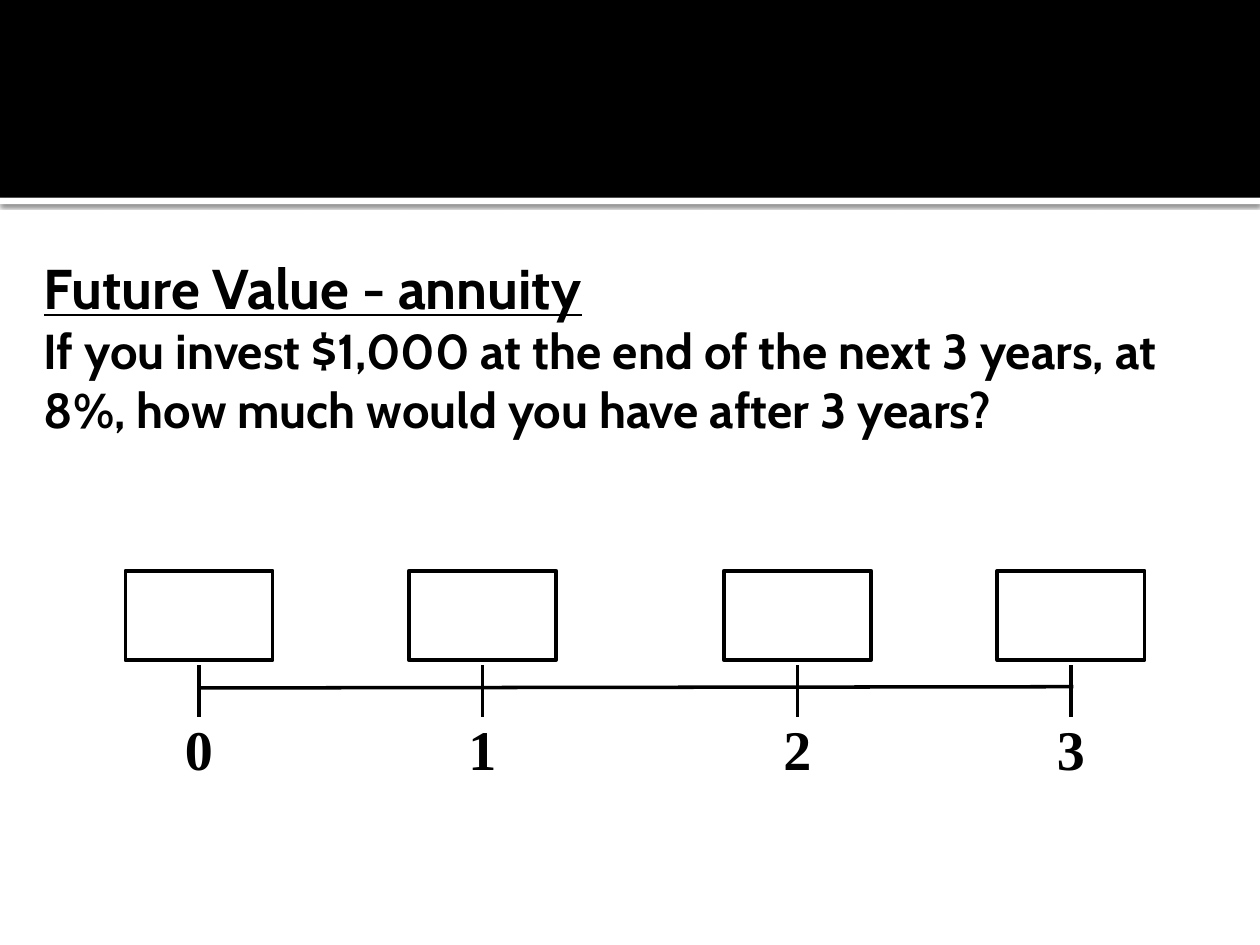
import pptx
import pptx.util
import pptx.dml.color
import pptx.enum.shapes
import pptx.enum.text
import pptx.oxml
import pptx.oxml.ns
from lxml import etree

Inches = pptx.util.Inches
Pt = pptx.util.Pt
RECT = pptx.enum.shapes.MSO_SHAPE.RECTANGLE


class Theme:
    black = pptx.dml.color.RGBColor(0, 0, 0)
    white = pptx.dml.color.RGBColor(255, 255, 255)
    sans = "Cabin"
    serif = "Times New Roman"
    large = 32
    body = 28
    line = 2


def add_tag(parent, tag, **attrs):
    return etree.SubElement(parent, pptx.oxml.ns.qn(tag), attrs)


class Deck:
    def __init__(self, theme):
        self.theme = theme
        self.file = pptx.Presentation()
        self.file.slide_width = Inches(10)
        self.file.slide_height = Inches(7.5)
        self.slide = self.file.slides.add_slide(self.file.slide_layouts[6])

    def rect(self, left, top, width, height, fill=None):
        """Filled band, or an outlined box when no fill is given."""
        shape = self.slide.shapes.add_shape(
            RECT, Inches(left), Inches(top), Inches(width), Inches(height))
        shape.shadow.inherit = False
        if fill is None:
            shape.fill.background()
            shape.line.color.rgb = self.theme.black
            shape.line.width = Pt(self.theme.line)
        else:
            shape.fill.solid()
            shape.fill.fore_color.rgb = fill
            shape.line.fill.background()
        return shape

    def shade(self, shape, blur, dist, alpha):
        """Soft shadow that falls straight down."""
        effects = shape._element.spPr.find(pptx.oxml.ns.qn("a:effectLst"))
        outer = add_tag(effects, "a:outerShdw", blurRad=str(Pt(blur)),
                        dist=str(Pt(dist)), dir="5400000", rotWithShape="0")
        color = add_tag(outer, "a:srgbClr", val=str(self.theme.black))
        add_tag(color, "a:alpha", val=str(alpha * 1000))

    def rule(self, x1, y1, x2, y2):
        line = self.slide.shapes.add_connector(
            pptx.enum.shapes.MSO_CONNECTOR.STRAIGHT,
            Inches(x1), Inches(y1), Inches(x2), Inches(y2))
        line.line.color.rgb = self.theme.black
        line.line.width = Pt(self.theme.line)
        add_tag(line._element.spPr, "a:effectLst")

    def text(self, left, top, width, height):
        """Empty wrapped text box; gives back its frame."""
        box = self.slide.shapes.add_textbox(
            Inches(left), Inches(top), Inches(width), Inches(height))
        box.text_frame.word_wrap = True
        return box.text_frame

    def run(self, para, words, face, size, under=False):
        run = para.add_run()
        run.text = words
        run.font.name = face
        run.font.size = Pt(size)
        run.font.bold = True
        run.font.underline = under
        run.font.color.rgb = self.theme.black

    def tabs(self, para, stops):
        """Centred tab stops, measured from the text edge."""
        tabs = add_tag(para._p.get_or_add_pPr(), "a:tabLst")
        for stop in stops:
            add_tag(tabs, "a:tab", pos=str(Inches(stop)), algn="ctr")


def main():
    theme = Theme()
    deck = Deck(theme)

    # Header band with a shaded white strip
    strip = deck.rect(0, 1.57, 10, 0.05, theme.white)
    deck.shade(strip, 2.5, 0.8, 60)
    deck.rect(0, 0, 10, 1.57, theme.black)

    # Title and question
    frame = deck.text(0.25, 1.83, 9.5, 1.83)
    frame.vertical_anchor = pptx.enum.text.MSO_ANCHOR.MIDDLE
    para = frame.paragraphs[0]
    deck.run(para, "Future Value - annuity", theme.sans, theme.large, True)
    para.add_line_break()
    deck.run(para, "If you invest $1,000 at the end of the next 3 years, at 8%, "
             "how much would you have after 3 years?", theme.sans, theme.body)

    # Timeline: a box and a tick for each year
    years = [1.58, 3.83, 6.33, 8.5]
    width = 1.17
    deck.rule(years[0], 5.46, years[-1] + 0.02, 5.45)
    for mid in years:
        deck.rect(mid - width / 2, 4.53, width, 0.71)
        deck.rule(mid, 5.28, mid, 5.69)

    # Year labels, centred under the ticks
    left, inset = 0.83, 0.1
    para = deck.text(left, 5.62, 8.42, 0.63).paragraphs[0]
    deck.tabs(para, [mid - left - inset for mid in years])
    for year in range(len(years)):
        deck.run(para, f"\t{year}", theme.serif, theme.large)

    deck.file.save("out.pptx")


if __name__ == "__main__":
    main()
